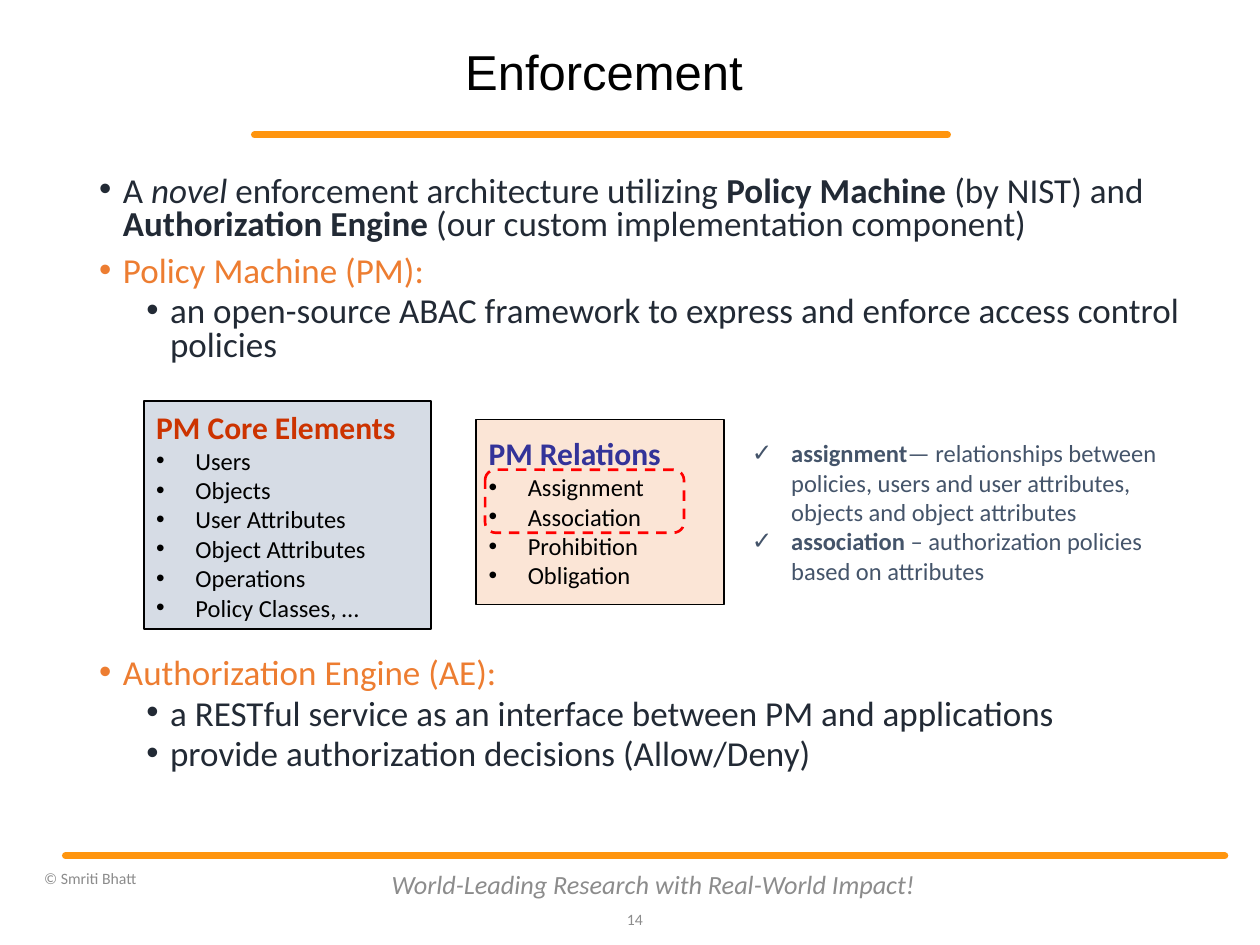
from lxml.etree import SubElement
from pptx import Presentation
from pptx.dml.color import RGBColor
from pptx.enum.dml import MSO_LINE
from pptx.enum.shapes import MSO_CONNECTOR, MSO_SHAPE
from pptx.enum.text import MSO_ANCHOR, PP_ALIGN
from pptx.oxml.ns import qn
from pptx.util import Cm, Pt

COLORS = {
    "rule": "FF950E", "body": "222A35", "heading": "ED7D31", "black": "000000",
    "footer": "8C8C8C", "elements": "D6DCE5", "elements_title": "CC3300",
    "relations": "FBE5D6", "relations_title": "333399", "notes": "44546A",
    "highlight": "FF0000",
}


def color(name):
    """Return the named palette colour."""
    return RGBColor.from_string(COLORS[name])


def add_rule(slide, left, top, width):
    """Draw a thick horizontal rule with round ends."""
    line = slide.shapes.add_connector(
        MSO_CONNECTOR.STRAIGHT, Cm(left), Cm(top), Cm(left + width), Cm(top))
    line.line.color.rgb = color("rule")
    line.line.width = Pt(4)
    line.line._get_or_add_ln().set("cap", "rnd")
    SubElement(line._element.spPr, qn("a:effectLst"))


def add_box(slide, left, top, width, height, anchor=MSO_ANCHOR.MIDDLE):
    """Add a wrapping text box and return it."""
    box = slide.shapes.add_textbox(Cm(left), Cm(top), Cm(width), Cm(height))
    box.text_frame.word_wrap = True
    box.text_frame.vertical_anchor = anchor
    return box


def add_panel(slide, left, top, width, height, preset=MSO_SHAPE.RECTANGLE,
              fill=None, outline="black", weight=1):
    """Add an outlined shape, filled when a fill is named, and return it."""
    panel = slide.shapes.add_shape(preset, Cm(left), Cm(top), Cm(width), Cm(height))
    panel.shadow.inherit = False
    if fill:
        panel.fill.solid()
        panel.fill.fore_color.rgb = color(fill)
    else:
        panel.fill.background()
    panel.line.color.rgb = color(outline)
    panel.line.width = Pt(weight)
    return panel


def write(shape, text, size=14, ink="black", font="Calibri", bold=False, italic=False,
          align=PP_ALIGN.LEFT, bullet=None, indent=0.79, hanging=0.79,
          spacing=None, before=0):
    """Write one paragraph from a string or a list of (text, style) runs."""
    frame = shape.text_frame
    first = not frame.paragraphs[0].runs
    paragraph = frame.paragraphs[0] if first else frame.add_paragraph()
    if bullet:
        properties = paragraph._p.get_or_add_pPr()
        properties.set("marL", str(Cm(indent)))
        properties.set("indent", str(-Cm(hanging)))
        SubElement(properties, qn("a:buFont"), typeface="Arial")
        SubElement(properties, qn("a:buChar"), char=bullet)
    paragraph.alignment = align
    if spacing:
        paragraph.line_spacing = spacing
    if before and not first:
        paragraph.space_before = Pt(before)
    for words, style in [(text, "")] if isinstance(text, str) else text:
        run = paragraph.add_run()
        run.text = words
        run.font.name = font
        run.font.size = Pt(size)
        run.font.color.rgb = color(ink)
        run.font.bold = bold or style == "bold"
        run.font.italic = italic or style == "italic"


def add_header(slide, left, top, width):
    """Place the title with its rule beneath."""
    title = add_box(slide, left + 0.2, top, width - 0.28, 1.3, MSO_ANCHOR.BOTTOM)
    write(title, "Enforcement", size=28, font="Arial", align=PP_ALIGN.CENTER, spacing=0.9)
    add_rule(slide, left, top + 1.86, width)


def add_outline(slide, left, top, width, height, items):
    """Place a two-level bulleted outline of (level, colour, text) items."""
    box = add_box(slide, left, top, width, height, MSO_ANCHOR.TOP)
    for level, ink, text in items:
        write(box, text, size=20, ink=ink, bullet="•", indent=0.48 + 0.95 * level,
              hanging=0.48, spacing=0.8, before=3.8 if level else 7.5)


def add_list_panel(slide, left, top, width, height, title, items, theme):
    """Place a filled panel with a bold title and bulleted items."""
    panel = add_panel(slide, left, top, width, height, fill=theme)
    panel.text_frame.vertical_anchor = MSO_ANCHOR.MIDDLE
    write(panel, title, size=18, ink=f"{theme}_title", bold=True)
    for item in items:
        write(panel, item, bullet="•")


def add_policy_machine(slide, left, top):
    """Place both policy machine panels, the definitions and the highlight."""
    add_list_panel(slide, left, top, 5.79, 4.6, "PM Core Elements",
                   ["Users", "Objects", "User Attributes", "Object Attributes",
                    "Operations", "Policy Classes, …"], "elements")
    add_list_panel(slide, left + 6.7, top + 0.38, 5, 3.73, "PM Relations",
                   ["Assignment", "Association", "Prohibition", "Obligation"],
                   "relations")
    notes = add_box(slide, left + 12.01, top - 0.1, 9.4, 4.67)
    for term, meaning in [
        ("assignment", "— relationships between policies, users and user "
                       "attributes, objects and object attributes"),
        ("association ", "– authorization policies based on attributes"),
    ]:
        write(notes, [(term, "bold"), (meaning, "")], ink="notes", bullet="✓")
    highlight = add_panel(slide, left + 6.88, top + 1.39, 4.01, 1.27,
                          MSO_SHAPE.ROUNDED_RECTANGLE, outline="highlight", weight=1.5)
    highlight.line.dash_style = MSO_LINE.DASH


def add_footer(slide, left, top, width):
    """Place the footer rule, copyright, motto and slide number."""
    add_rule(slide, left, top, width)
    write(add_box(slide, left - 0.68, top, 6.99, 0.91), "© Smriti Bhatt",
          size=9, ink="footer")
    write(add_box(slide, left + 6.3, top + 0.07, 11.1, 1.02),
          "World-Leading Research with Real-World Impact!",
          size=15, ink="footer", italic=True, align=PP_ALIGN.CENTER)
    write(add_box(slide, left + 10.87, top + 0.78, 1.02, 1.02), "14",
          size=9, ink="footer", align=PP_ALIGN.RIGHT)


def main():
    """Build the slide and save it."""
    presentation = Presentation()
    presentation.slide_width, presentation.slide_height = Cm(25.4), Cm(19.05)
    slide = presentation.slides.add_slide(presentation.slide_layouts[6])
    add_header(slide, 5.13, 0.86, 13.97)
    add_outline(slide, 1.75, 3.43, 22.73, 4.4, [
        (0, "body", [
            ("A ", ""), ("novel ", "italic"),
            ("enforcement architecture utilizing ", ""), ("Policy Machine ", "bold"),
            ("(by NIST) and ", ""), ("Authorization Engine ", "bold"),
            ("(our custom implementation component)", "")]),
        (0, "heading", "Policy Machine (PM):"),
        (1, "body", "an open-source ABAC framework to express and enforce "
                    "access control policies"),
    ])
    add_policy_machine(slide, 2.9, 8.08)
    add_outline(slide, 1.75, 13.16, 22.73, 3, [
        (0, "heading", "Authorization Engine (AE):"),
        (1, "body", "a RESTful service as an interface between PM and applications"),
        (1, "body", "provide authorization decisions (Allow/Deny)"),
    ])
    add_footer(slide, 1.32, 17.25, 23.37)
    presentation.save("out.pptx")


if __name__ == "__main__":
    main()
